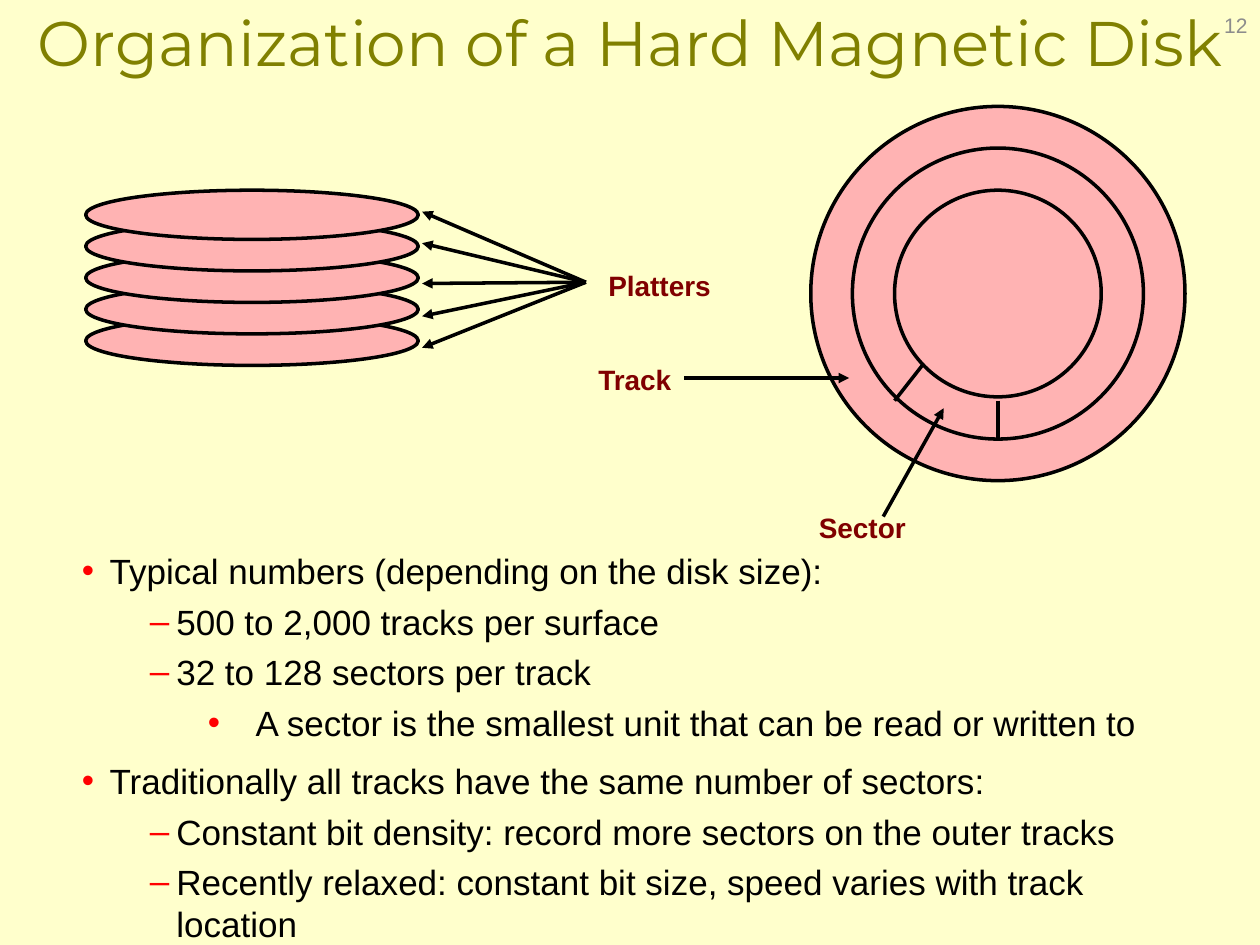
import pptx
import pptx.util
import pptx.dml.color
import pptx.enum.shapes
import pptx.enum.text
from lxml import etree

In, Pt = pptx.util.Inches, pptx.util.Pt
Align = pptx.enum.text.PP_ALIGN
Anchor = pptx.enum.text.MSO_ANCHOR
NS = "http://schemas.openxmlformats.org/drawingml/2006/main"
WIDE, HIGH = 10, 7.5
COLOR = {"back": "FFFFCC", "title": "808000", "label": "800000", "disk": "FFB3B3",
         "ink": "000000", "bullet": "FF0000", "page": "8C8C8C"}

TITLE = "Organization of a Hard Magnetic Disk"
PAGE = "12"
# level, space before, text
POINTS = [
    (0, 5, "Typical numbers (depending on the disk size):"),
    (1, 5, "500 to 2,000 tracks per surface"),
    (1, 5, "32 to 128 sectors per track"),
    (2, 5, "A sector is the smallest unit that can be read or written to"),
    (0, 9, "Traditionally all tracks have the same number of sectors:"),
    (1, 5, "Constant bit density: record more sectors on the outer tracks"),
    (1, 5, "Recently relaxed: constant bit size, speed varies with track location"),
]
# bullet, left margin, hanging indent for each level
LEVELS = [("•", 0.22, 0.22), ("–", 0.75, 0.21), ("•", 1.38, 0.38)]
LABELS = [("Platters", 4.73, 2.08, 1.01), ("Track", 4.65, 2.83, 0.79),
          ("Sector", 6.4, 4, 0.89)]

STACK = {"left": 0.68, "top": 1.51, "wide": 2.64, "high": 0.39, "step": 0.25}
TIPS = [1.68, 1.93, 2.25, 2.51, 2.76]
HUB = (4.65, 2.24)
CENTER = (7.92, 2.33)
RINGS = [(1.485, "disk"), (1.155, None), (0.82, None)]
EDGES = [((7.92, 3.18), (7.92, 3.49)), ((7.1, 3.18), (7.32, 2.9))]
POINTERS = [((5.43, 3), (6.74, 3)), ((7.01, 4.1), (7.49, 3.24))]


def rgb(name):
    return pptx.dml.color.RGBColor.from_string(COLOR[name])


def node(parent, tag, **attrs):
    return etree.SubElement(parent, f"{{{NS}}}{tag}", **attrs)


def place(shape, left, top, wide, high):
    shape.left, shape.top, shape.width, shape.height = map(In, (left, top, wide, high))


def write(frame, lines, size=20, font="Arial", color="ink", bold=False,
          align=Align.LEFT, anchor=Anchor.TOP, wrap=True, inset=(0.1, 0.05)):
    """Fill a text frame; lines are (level or None, space before, text)."""
    frame.word_wrap = wrap
    frame.auto_size = pptx.enum.text.MSO_AUTO_SIZE.NONE
    frame.vertical_anchor = anchor
    frame.margin_left = frame.margin_right = In(inset[0])
    frame.margin_top = frame.margin_bottom = In(inset[1])
    for i, (level, gap, text) in enumerate(lines):
        para = frame.add_paragraph() if i else frame.paragraphs[0]
        para.alignment = align
        para.space_before = Pt(gap)
        run = para.add_run()
        run.text = text
        run.font.size, run.font.name, run.font.bold = Pt(size), font, bold
        run.font.color.rgb = rgb(color)
        if level is not None:
            para.level = level
            mark, left, hang = LEVELS[level]
            props = para._p.get_or_add_pPr()
            props.set("marL", str(In(left)))
            props.set("indent", str(-In(hang)))
            node(node(props, "buClr"), "srgbClr", val=COLOR["bullet"])
            node(props, "buFont", typeface="Arial")
            node(props, "buChar", char=mark)


def label(slide, text, left, top, wide, high, **style):
    box = slide.shapes.add_textbox(0, 0, 0, 0)
    place(box, left, top, wide, high)
    write(box.text_frame, [(None, 0, text)], **style)


def oval(slide, left, top, wide, high, fill="disk"):
    shape = slide.shapes.add_shape(pptx.enum.shapes.MSO_SHAPE.OVAL, 0, 0, 0, 0)
    place(shape, left, top, wide, high)
    shape.shadow.inherit = False
    if fill:
        shape.fill.solid()
        shape.fill.fore_color.rgb = rgb(fill)
    else:
        shape.fill.background()
    shape.line.color.rgb = rgb("ink")
    shape.line.width = Pt(2)


def link(slide, start, end, arrow=False):
    line = slide.shapes.add_connector(pptx.enum.shapes.MSO_CONNECTOR.STRAIGHT,
                                      *map(In, start + end))
    line.line.color.rgb = rgb("ink")
    line.line.width = Pt(2)
    if arrow:
        node(line.line._get_or_add_ln(), "tailEnd", type="triangle")
    node(line._element.spPr, "effectLst")


def main():
    deck = pptx.Presentation()
    deck.slide_width, deck.slide_height = In(WIDE), In(HIGH)
    slide = deck.slides.add_slide(deck.slide_layouts[5])
    slide.background.fill.solid()
    slide.background.fill.fore_color.rgb = rgb("back")

    title = slide.shapes.title
    place(title, 0, 0, WIDE, 0.66)
    write(title.text_frame, [(None, 0, TITLE)], size=36, font="Montserrat",
          color="title", align=Align.CENTER, inset=(0.07, 0.03))

    body = slide.shapes.add_textbox(0, 0, 0, 0)
    place(body, 0.58, 4.33, 8.67, 3.19)
    write(body.text_frame, POINTS, inset=(0.07, 0.03))

    for row in reversed(range(len(TIPS))):
        oval(slide, STACK["left"], STACK["top"] + row * STACK["step"],
             STACK["wide"], STACK["high"])
    for tip in TIPS:
        link(slide, HUB, (3.35, tip), arrow=True)

    for radius, fill in RINGS:
        oval(slide, CENTER[0] - radius, CENTER[1] - radius, 2 * radius, 2 * radius, fill)
    for start, end in EDGES:
        link(slide, start, end)
    for start, end in POINTERS:
        link(slide, start, end, arrow=True)

    for text, left, top, wide in LABELS:
        label(slide, text, left, top, wide, 0.36, size=16, color="label",
              bold=True, wrap=False)
    label(slide, PAGE, 7.67, 0, 2.33, 0.4, size=12, color="page",
          align=Align.RIGHT, anchor=Anchor.MIDDLE)
    deck.save("out.pptx")


if __name__ == "__main__":
    main()
